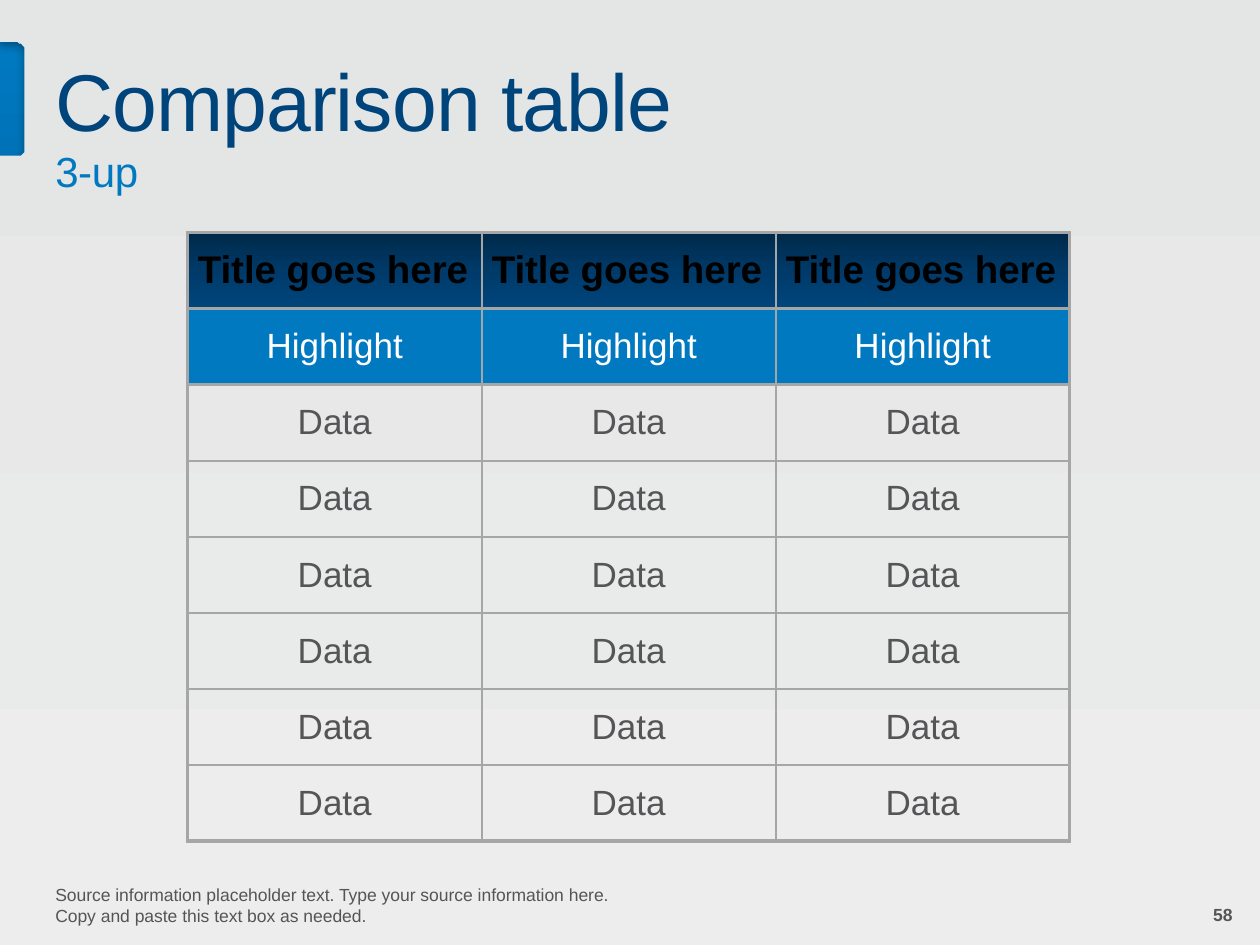
import math

import pptx
import pptx.dml.color
import pptx.enum.text
import pptx.oxml
import pptx.oxml.ns
import pptx.util

Pt = pptx.util.Pt
RGBColor = pptx.dml.color.RGBColor
ALIGN = pptx.enum.text.PP_ALIGN
ANCHOR = pptx.enum.text.MSO_ANCHOR
qn = pptx.oxml.ns.qn

PAGE_WIDTH, PAGE_HEIGHT = 720, 540
FONT = "Arial"

NAVY = RGBColor(0x00, 0x44, 0x7C)
DEEP_NAVY = RGBColor(0x00, 0x45, 0x7C)
MID_NAVY = RGBColor(0x00, 0x3A, 0x69)
DARK_NAVY = RGBColor(0x00, 0x29, 0x49)
BLUE = RGBColor(0x00, 0x79, 0xC1)
TAB_BLUE = RGBColor(0x00, 0x79, 0xC0)
GRAY = RGBColor(0x55, 0x54, 0x57)
RULE_GRAY = RGBColor(0xA6, 0xA6, 0xA6)
PANEL_TOP = RGBColor(0xE4, 0xE6, 0xE5)
PANEL_BOTTOM = RGBColor(0xEC, 0xED, 0xEC)
BLACK = RGBColor(0, 0, 0)
WHITE = RGBColor(255, 255, 255)


def make_element(markup):
    namespace = pptx.oxml.ns.nsdecls("a")
    return pptx.oxml.parse_xml(markup.replace(">", f" {namespace}>", 1))


def set_gradient(fill, owner, stops):
    """Fill from top to bottom; owner is the element that holds the fill."""
    fill.gradient()
    fill.gradient_angle = 270
    stop_list = owner.find(".//" + qn("a:gsLst"))
    for stop in list(stop_list):
        stop_list.remove(stop)
    for percent, color in stops:
        stop_list.append(make_element(
            f'<a:gs pos="{percent * 1000}"><a:srgbClr val="{color}"/></a:gs>'))


def add_span(para, text, size, color, bold=False, spacing=0):
    span = para.add_run()
    span.text = text
    span.font.name = FONT
    span.font.size = Pt(size)
    span.font.bold = bold
    span.font.color.rgb = color
    if spacing:
        span.font._element.set("spc", str(round(spacing * 100)))


def add_text(page, bounds, text, size, color, anchor=ANCHOR.TOP,
             align=ALIGN.LEFT, line_height=None, **style):
    box = page.shapes.add_textbox(*map(Pt, bounds))
    frame = box.text_frame
    frame.word_wrap = True
    frame.vertical_anchor = anchor
    para = frame.paragraphs[0]
    para.alignment = align
    if line_height:
        para.line_spacing = Pt(line_height)
    add_span(para, text, size, color, **style)


def add_panel(page, left, top, width, height):
    """Light panel over the page, with a rounded notch that shows a blue tab."""
    notch_width, notch_top, notch_bottom, radius = 14.2, 24.5, 89.3, 4.3
    right, bottom = left + width, top + height
    arc_x = left + notch_width - radius
    points = [(left, top + notch_top)]
    for center_y, start in ((top + notch_top + radius, -90),
                            (top + notch_bottom - radius, 0)):
        for degrees in range(start, start + 91, 15):
            angle = math.radians(degrees)
            points.append((arc_x + radius * math.cos(angle),
                           center_y + radius * math.sin(angle)))
    points += [(left, top + notch_bottom), (left, bottom),
               (right, bottom), (right, top)]
    builder = page.shapes.build_freeform(left, top, scale=Pt(1))
    builder.add_line_segments(points, close=True)
    panel = builder.convert_to_shape()
    panel.line.fill.background()
    properties = panel._element.spPr
    set_gradient(panel.fill, properties, [(0, PANEL_TOP), (100, PANEL_BOTTOM)])
    properties.append(make_element(
        f'<a:effectLst><a:outerShdw blurRad="{Pt(4)}" dist="{Pt(3)}" '
        f'dir="5400000" algn="t" rotWithShape="0"><a:srgbClr val="{BLACK}">'
        '<a:alpha val="30000"/></a:srgbClr></a:outerShdw></a:effectLst>'))


def set_borders(cell, widths):
    """Widths are in the order left, right, top, bottom."""
    properties = cell._tc.get_or_add_tcPr()
    for index, (side, width) in enumerate(zip("LRTB", widths)):
        properties.insert(index, make_element(
            f'<a:ln{side} w="{Pt(width)}"><a:solidFill>'
            f'<a:srgbClr val="{RULE_GRAY}"/></a:solidFill></a:ln{side}>'))


def add_comparison(page, left, top, width, height):
    rows = [["Title goes here"] * 3, ["Highlight"] * 3] + [["Data"] * 3] * 6
    row_count, column_count = len(rows), len(rows[0])
    table = page.shapes.add_table(
        row_count, column_count, *map(Pt, (left, top, width, height))).table
    table.first_row = table.horz_banding = False
    for column in table.columns:
        column.width = Pt(width / column_count)
    for row in table.rows:
        row.height = Pt(height / row_count)

    outer, inner = 2.25, 1.5
    for r, texts in enumerate(rows):
        for c, text in enumerate(texts):
            cell = table.cell(r, c)
            cell.vertical_anchor = ANCHOR.MIDDLE
            cell.margin_left = cell.margin_right = Pt(5.76)
            para = cell.text_frame.paragraphs[0]
            if r == 0:
                set_gradient(cell.fill, cell._tc, [
                    (0, DARK_NAVY), (50, MID_NAVY), (100, DEEP_NAVY)])
                add_span(para, text, 22, BLACK, bold=True)
            else:
                para.alignment = ALIGN.CENTER
                if r == 1:
                    cell.fill.solid()
                    cell.fill.fore_color.rgb = BLUE
                else:
                    cell.fill.background()
                add_span(para, text, 20, WHITE if r == 1 else GRAY)
            on_edge = (c == 0, c == column_count - 1, r == 0, r == row_count - 1)
            set_borders(cell, [outer if edge else inner for edge in on_edge])


def add_heading(page, left, top, width):
    add_text(page, (left, top, width, 63.4), "Comparison table", 46, NAVY,
             anchor=ANCHOR.BOTTOM, spacing=-0.5)
    add_text(page, (left, top + 59.8, 430.6, 32.4), "3-up", 24, BLUE,
             line_height=24, spacing=-0.2)


def add_footer(page, left, top, width):
    add_text(page, (left, top, 344.9, 31.7),
             "Source information placeholder text. Type your source information "
             "here. Copy and paste this text box as needed.",
             10, GRAY, anchor=ANCHOR.BOTTOM)
    number_width = 224.6
    add_text(page, (left + width - number_width, top + 11.8, number_width, 19.4),
             "58", 10, GRAY, anchor=ANCHOR.BOTTOM, align=ALIGN.RIGHT, bold=True)


def main():
    deck = pptx.Presentation()
    deck.slide_width, deck.slide_height = Pt(PAGE_WIDTH), Pt(PAGE_HEIGHT)
    page = deck.slides.add_slide(deck.slide_layouts[6])
    set_gradient(page.background.fill, page.element,
                 [(5, TAB_BLUE), (85, DEEP_NAVY)])
    add_panel(page, 0, 0, PAGE_WIDTH, PAGE_HEIGHT)
    add_heading(page, 24.5, 24.5, 648)
    add_comparison(page, 107.3, 132.8, 504, 348)
    add_footer(page, 24.5, 501.1, 686.9)
    deck.save("out.pptx")


if __name__ == "__main__":
    main()
